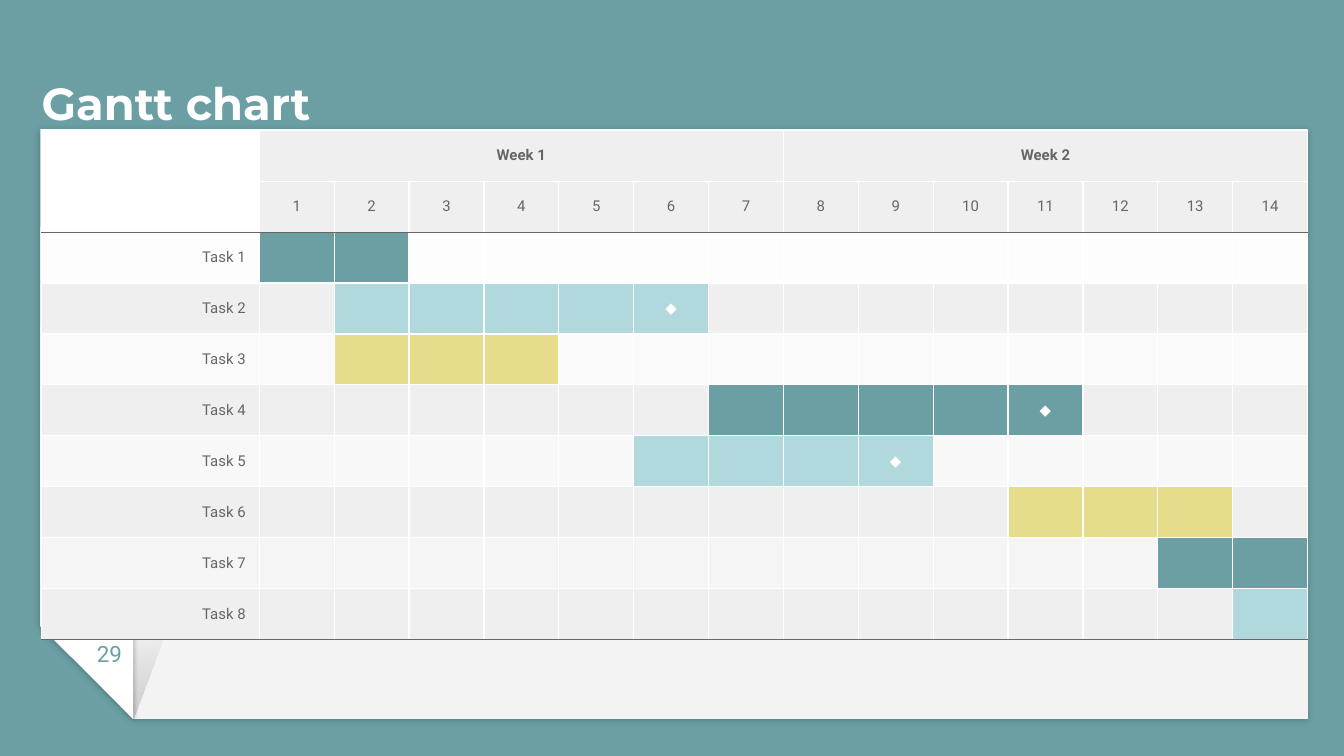
from lxml import etree
from pptx import Presentation
from pptx.dml.color import RGBColor
from pptx.enum.shapes import MSO_SHAPE
from pptx.enum.text import MSO_ANCHOR, PP_ALIGN
from pptx.oxml.ns import qn
from pptx.util import Inches, Pt

SNIPPED_CARD = MSO_SHAPE.SNIP_1_RECTANGLE
TRIANGLE = MSO_SHAPE.RIGHT_TRIANGLE
LEFT, CENTER, RIGHT = PP_ALIGN.LEFT, PP_ALIGN.CENTER, PP_ALIGN.RIGHT
TOP, MIDDLE, BOTTOM = MSO_ANCHOR.TOP, MSO_ANCHOR.MIDDLE, MSO_ANCHOR.BOTTOM

TEAL = RGBColor(0x6B, 0x9F, 0xA4)
AQUA = RGBColor(0xB1, 0xD9, 0xDD)
YELLOW = RGBColor(0xE6, 0xDD, 0x8C)
WHITE = RGBColor(0xFF, 0xFF, 0xFF)
BLACK = RGBColor(0, 0, 0)
PALE = RGBColor(0xF3, 0xF3, 0xF3)
GRAY = RGBColor(0xEF, 0xEF, 0xEF)
DARK = RGBColor(0x66, 0x66, 0x66)

DAYS, WEEK_DAYS, HEADER_ROWS = 14, 7, 2
TABLE_WIDTH, TABLE_HEIGHT, LABEL_WIDTH = 9.42, 3.79, 1.62

# First day, last day, bar colour, milestone on the last day
TASKS = [
    (1, 2, TEAL, False),
    (2, 6, AQUA, True),
    (2, 4, YELLOW, False),
    (7, 11, TEAL, True),
    (6, 9, AQUA, True),
    (11, 13, YELLOW, False),
    (13, 14, TEAL, False),
    (14, 14, AQUA, False),
]


def write_text(frame, text, size=8, font="Roboto", color=DARK, bold=False,
               align=CENTER, anchor=MIDDLE):
    frame.vertical_anchor = anchor
    para = frame.paragraphs[0]
    para.alignment = align
    span = para.add_run()
    span.text = text
    span.font.size = Pt(size)
    span.font.name = font
    span.font.bold = bold
    span.font.color.rgb = color


def set_margins(frame, margin):
    frame.margin_left = frame.margin_right = Inches(margin)
    frame.margin_top = frame.margin_bottom = Inches(margin)


def place(shape, left, top, width, height):
    shape.left, shape.top = Inches(left), Inches(top)
    shape.width, shape.height = Inches(width), Inches(height)


def add_turned_shape(page, kind, left, top, width, height):
    """Add a shape turned upside down, with neither line nor shadow."""
    shape = page.shapes.add_shape(kind, Inches(left), Inches(top),
                                  Inches(width), Inches(height))
    shape.rotation = 180
    shape.line.fill.background()
    shape.shadow.inherit = False
    return shape


def fill_gradient(shape, colors, angle):
    shape.fill.gradient()
    shape.fill.gradient_angle = angle
    for stop, color in zip(shape.fill.gradient_stops, colors):
        stop.color.rgb = color


def add_shadow(shape, blur, direction):
    effects = shape._element.spPr.find(qn("a:effectLst"))
    shadow = etree.SubElement(
        effects, qn("a:outerShdw"), blurRad=str(Pt(blur)), dist=str(Pt(0.8)),
        dir=str(direction * 60000), algn="bl", rotWithShape="0")
    color = etree.SubElement(shadow, qn("a:srgbClr"), val=str(BLACK))
    etree.SubElement(color, qn("a:alpha"), val="20000")


def add_folded_card(page):
    card = add_turned_shape(page, SNIPPED_CARD, 0.3, 0.96, 9.43, 4.39)
    card.adjustments[0] = 0.158
    fill_gradient(card, (WHITE, PALE), 90)
    add_shadow(card, 3.4, 90)

    fold = add_turned_shape(page, TRIANGLE, 0.3, 4.65, 0.69, 0.7)
    fold.fill.solid()
    fold.fill.fore_color.rgb = WHITE
    add_shadow(fold, 2.2, 0)

    shade = add_turned_shape(page, TRIANGLE, 0.99, 4.65, 0.26, 0.7)
    shade._element.spPr.xfrm.set("flipH", "1")
    fill_gradient(shade, (BLACK, BLACK), 270)
    stops = shade._element.spPr.iter(qn("a:srgbClr"))
    for color, opacity in zip(list(stops), (17, 0)):
        etree.SubElement(color, qn("a:alpha"), val=str(opacity * 1000))


def set_borders(cell, top=WHITE, bottom=WHITE):
    properties = cell._tc.get_or_add_tcPr()
    sides = {"a:lnL": WHITE, "a:lnR": WHITE, "a:lnT": top, "a:lnB": bottom}
    for side, color in sides.items():
        line = etree.SubElement(properties, qn(side), w=str(Pt(0.75)))
        fill = etree.SubElement(line, qn("a:solidFill"))
        etree.SubElement(fill, qn("a:srgbClr"), val=str(color))


def format_cell(cell, fill=None, text="", top=WHITE, bottom=WHITE, **text_format):
    set_borders(cell, top, bottom)
    if fill is None:
        cell.fill.background()
    else:
        cell.fill.solid()
        cell.fill.fore_color.rgb = fill
    if text:
        write_text(cell.text_frame, text, **text_format)
        cell.vertical_anchor = MIDDLE
    else:
        para = cell.text_frame.paragraphs[0]
        etree.SubElement(para._p, qn("a:endParaRPr"), sz="800")


def fill_header(table):
    for day in range(DAYS + 1):
        starts_week = day % WEEK_DAYS == 1
        week = f"Week {day // WEEK_DAYS + 1}" if starts_week else ""
        fill = GRAY if day else None
        format_cell(table.cell(0, day), fill, week, bold=True)
        format_cell(table.cell(1, day), fill, str(day) if day else "", bottom=DARK)
    for first in range(1, DAYS, WEEK_DAYS):
        table.cell(0, first).merge(table.cell(0, first + WEEK_DAYS - 1))


def fill_tasks(table):
    for number, (first, last, color, milestone) in enumerate(TASKS, 1):
        row = number + HEADER_ROWS - 1
        band = None if number % 2 else GRAY
        edges = {"top": DARK if number == 1 else WHITE,
                 "bottom": DARK if number == len(TASKS) else WHITE}
        format_cell(table.cell(row, 0), band, f"Task {number}", align=RIGHT, **edges)
        for day in range(1, DAYS + 1):
            fill = color if first <= day <= last else band
            mark = "◆" if milestone and day == last else ""
            format_cell(table.cell(row, day), fill, mark, color=WHITE, **edges)


def add_gantt_table(page):
    rows = HEADER_ROWS + len(TASKS)
    table = page.shapes.add_table(
        rows, DAYS + 1, Inches(0.31), Inches(0.97),
        Inches(TABLE_WIDTH), Inches(TABLE_HEIGHT)).table
    table.first_row = table.horz_banding = False
    day_width = (TABLE_WIDTH - LABEL_WIDTH) / DAYS
    for index, column in enumerate(table.columns):
        column.width = Inches(day_width if index else LABEL_WIDTH)
    for row in table.rows:
        row.height = Inches(TABLE_HEIGHT / rows)
    fill_header(table)
    fill_tasks(table)


def add_title(page, text):
    title = page.shapes.title
    place(title, 0.31, 0.39, 9.19, 0.57)
    set_margins(title.text_frame, 0)
    write_text(title.text_frame, text, size=24, font="Montserrat", color=WHITE,
               bold=True, align=LEFT, anchor=BOTTOM)


def add_page_number(page, text):
    box = page.shapes.add_textbox(Inches(0.56), Inches(4.66),
                                  Inches(0.51), Inches(0.34))
    box.text_frame.word_wrap = True
    set_margins(box.text_frame, 0.1)
    write_text(box.text_frame, text, size=12, color=TEAL, anchor=TOP)


def main():
    deck = Presentation()
    deck.slide_width = Inches(10)
    deck.slide_height = deck.slide_width * 9 // 16
    page = deck.slides.add_slide(deck.slide_layouts[5])
    page.background.fill.solid()
    page.background.fill.fore_color.rgb = TEAL
    add_folded_card(page)
    add_title(page, "Gantt chart")
    add_page_number(page, "29")
    add_gantt_table(page)
    deck.save("out.pptx")


if __name__ == "__main__":
    main()
